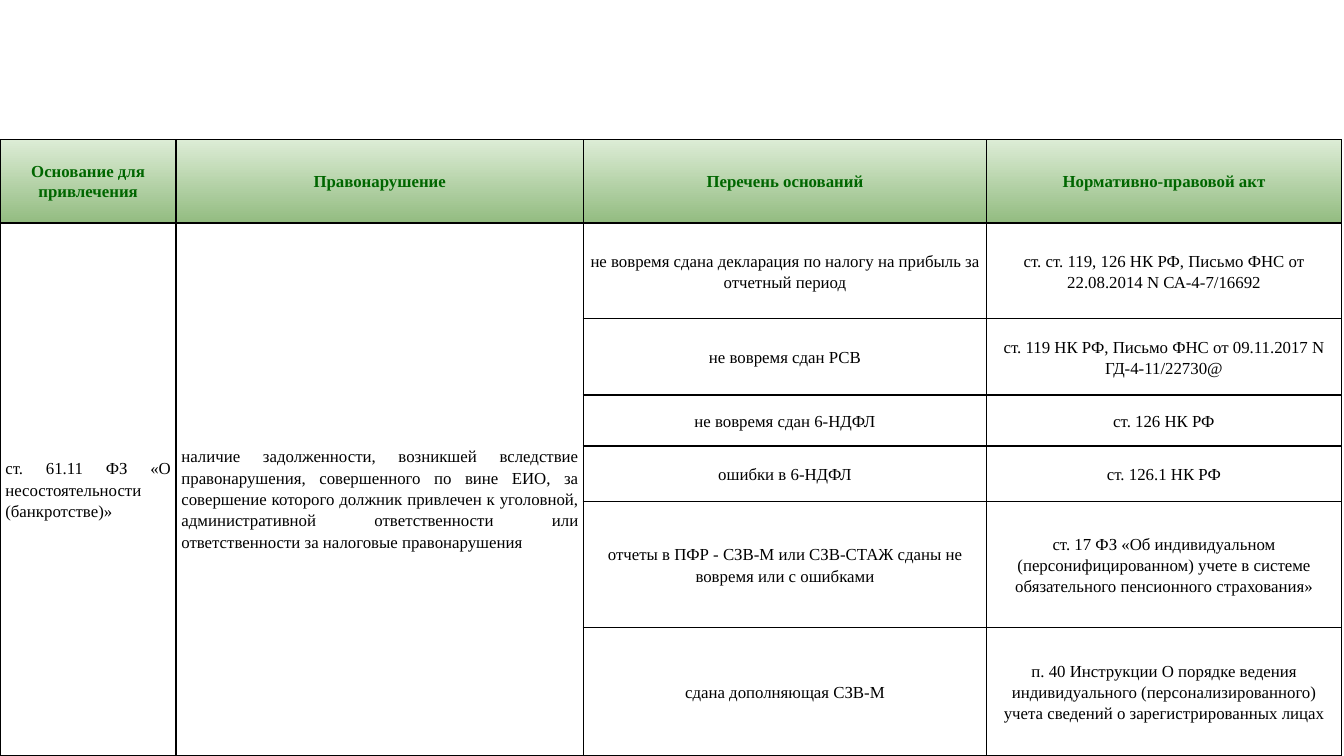
from lxml import etree
from pptx import Presentation
from pptx import util as u
from pptx.dml.color import RGBColor
from pptx.enum import text
from pptx.oxml import ns

FONT = "Times New Roman"
COLUMN_WIDTHS = [1.31, 3.03, 3, 2.64]
ROW_HEIGHTS = [0.62, 0.71, 0.57, 0.38, 0.41, 0.94, 0.95]
HEADINGS = ["Основание для привлечения", "Правонарушение",
            "Перечень оснований", "Нормативно-правовой акт"]
BASIS = "ст. 61.11 ФЗ «О несостоятельности (банкротстве)»"
OFFENCE = ("наличие задолженности, возникшей вследствие правонарушения, "
           "совершенного по вине ЕИО, за совершение которого должник привлечен "
           "к уголовной, административной ответственности или ответственности "
           "за налоговые правонарушения")
GROUNDS = [
    ("не вовремя сдана декларация по налогу на прибыль за отчетный период",
     "ст. ст. 119, 126 НК РФ, Письмо ФНС от 22.08.2014 N СА-4-7/16692"),
    ("не вовремя сдан РСВ",
     "ст. 119 НК РФ, Письмо ФНС от 09.11.2017 N ГД-4-11/22730@"),
    ("не вовремя сдан 6-НДФЛ", "ст. 126 НК РФ"),
    ("ошибки в 6-НДФЛ", "ст. 126.1 НК РФ"),
    ("отчеты в ПФР - СЗВ-М или СЗВ-СТАЖ сданы не вовремя или с ошибками",
     "ст. 17 ФЗ «Об индивидуальном (персонифицированном) учете в системе "
     "обязательного пенсионного страхования»"),
    ("сдана дополняющая СЗВ-М",
     "п. 40 Инструкции О порядке ведения индивидуального (персонализированного) "
     "учета сведений о зарегистрированных лицах"),
]


def color(value):
    """Turn a hex string into a colour."""
    return RGBColor.from_string(value)


def set_borders(cell, value="000000", points=0.75):
    """Draw a solid line on all four sides of a cell."""
    properties = cell._tc.get_or_add_tcPr()
    for side in ("a:lnL", "a:lnR", "a:lnT", "a:lnB"):
        line = etree.SubElement(properties, ns.qn(side), w=str(u.Pt(points)))
        fill = etree.SubElement(line, ns.qn("a:solidFill"))
        etree.SubElement(fill, ns.qn("a:srgbClr"), val=value)


def set_text(cell, words, align, spacing, margin, font_color, bold=False):
    """Write one paragraph into a cell and format it."""
    cell.vertical_anchor = text.MSO_ANCHOR.MIDDLE
    cell.margin_left = cell.margin_right = u.Inches(margin)
    cell.margin_top = cell.margin_bottom = u.Inches(margin)
    para = cell.text_frame.paragraphs[0]
    para.text = words
    para.alignment = align
    para.line_spacing = spacing
    for span in para.runs:
        span.font.name = FONT
        span.font.size = u.Pt(9)
        span.font.bold = bold
        span.font.color.rgb = color(font_color)


def format_heading(cell, words):
    """Format a header cell with its green gradient."""
    set_text(cell, words, text.PP_ALIGN.CENTER, 1.07, 0.1, "006600", bold=True)
    cell.fill.gradient()
    cell.fill.gradient_angle = 270
    for stop, value in zip(cell.fill.gradient_stops, ("DCECD5", "93BC81")):
        stop.color.rgb = color(value)


def format_body(cell, words, align=text.PP_ALIGN.CENTER):
    """Format a plain body cell."""
    set_text(cell, words, align, 1.15, 0.04, "000000")
    cell.fill.background()


def add_grounds_table(page, left, top):
    """Place the table of grounds for liability."""
    frame = page.shapes.add_table(
        len(ROW_HEIGHTS), len(COLUMN_WIDTHS), u.Inches(left), u.Inches(top),
        u.Inches(sum(COLUMN_WIDTHS)), u.Inches(sum(ROW_HEIGHTS)))
    table = frame.table
    table.first_row = table.horz_banding = False
    for column, width in zip(table.columns, COLUMN_WIDTHS):
        column.width = u.Inches(width)
    for row, height in zip(table.rows, ROW_HEIGHTS):
        row.height = u.Inches(height)
    for cell in table.iter_cells():
        set_borders(cell)

    for index, heading in enumerate(HEADINGS):
        format_heading(table.cell(0, index), heading)
    last_row = len(GROUNDS)
    for index, words in enumerate((BASIS, OFFENCE)):
        for row in range(1, last_row + 1):
            format_body(table.cell(row, index), words if row == 1 else "",
                        text.PP_ALIGN.JUSTIFY)
        table.cell(1, index).merge(table.cell(last_row, index))
    table.cell(1, 1).margin_top = u.Inches(0.18)
    for row, pair in enumerate(GROUNDS, start=1):
        for index, words in enumerate(pair, start=2):
            format_body(table.cell(row, index), words)


def main():
    """Build the deck and save it."""
    deck = Presentation()
    deck.slide_width = u.Inches(10)
    deck.slide_height = deck.slide_width * 9 // 16
    page = deck.slides.add_slide(deck.slide_layouts[6])
    add_grounds_table(page, 0, 1.04)
    deck.save("out.pptx")


if __name__ == "__main__":
    main()
